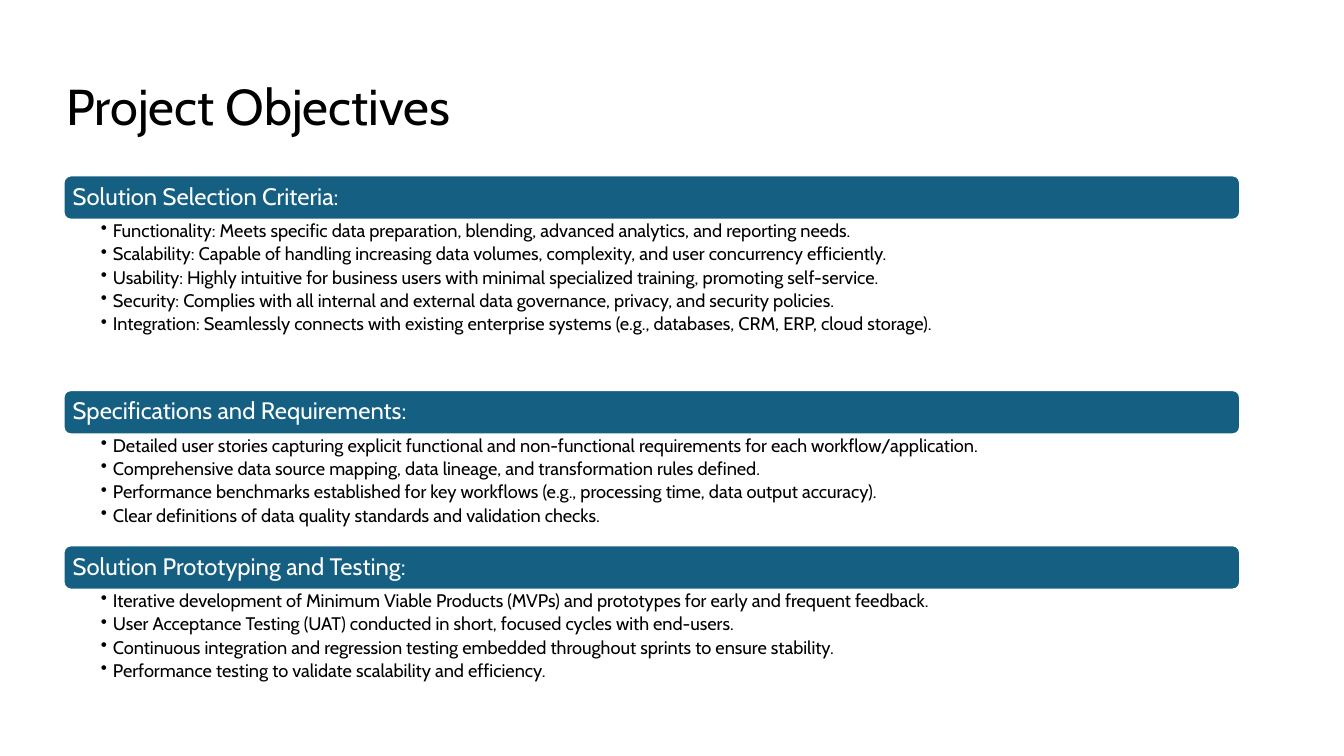
import dataclasses

import lxml.etree
import pptx
import pptx.dml.color
import pptx.enum.shapes
import pptx.enum.text
import pptx.oxml.ns
import pptx.util

Inches = pptx.util.Inches
Pt = pptx.util.Pt
RGB = pptx.dml.color.RGBColor
Align = pptx.enum.text.PP_ALIGN
Anchor = pptx.enum.text.MSO_ANCHOR


@dataclasses.dataclass(frozen=True)
class Theme:
    """Colours, typeface and type sizes of the slide."""
    face: str = "Cabin"
    ink: RGB = RGB(0x00, 0x00, 0x00)
    paper: RGB = RGB(0xFF, 0xFF, 0xFF)
    accent: RGB = RGB(0x15, 0x60, 0x82)
    title_size: float = 36
    heading_size: float = 17
    bullet_size: float = 13
    line_spacing: float = 0.9


THEME = Theme()
SLIDE_SIZE = (13.33, 7.5)
TITLE_BOX = (0.56, 0.71, 5.8, 0.69)
OBJECTIVES_BOX = (0.63, 1.74, 11.67, 5.2)
HEADING_HEIGHT = 0.44
BULLET_INDENT = 0.12

OBJECTIVES = [
    ("Solution Selection Criteria:", 1.69, [
        "Functionality: Meets specific data preparation, blending, advanced analytics, and reporting needs.",
        "Scalability: Capable of handling increasing data volumes, complexity, and user concurrency efficiently.",
        "Usability: Highly intuitive for business users with minimal specialized training, promoting self-service.",
        "Security: Complies with all internal and external data governance, privacy, and security policies.",
        "Integration: Seamlessly connects with existing enterprise systems (e.g., databases, CRM, ERP, cloud storage).",
    ]),
    ("Specifications and Requirements:", 1.1, [
        "Detailed user stories capturing explicit functional and non-functional requirements for each workflow/application.",
        "Comprehensive data source mapping, data lineage, and transformation rules defined.",
        "Performance benchmarks established for key workflows (e.g., processing time, data output accuracy).",
        "Clear definitions of data quality standards and validation checks.",
    ]),
    ("Solution Prototyping and Testing:", 1.1, [
        "Iterative development of Minimum Viable Products (MVPs) and prototypes for early and frequent feedback.",
        "User Acceptance Testing (UAT) conducted in short, focused cycles with end-users.",
        "Continuous integration and regression testing embedded throughout sprints to ensure stability.",
        "Performance testing to validate scalability and efficiency.",
    ]),
]


def format_paragraph(paragraph, size, color):
    """Apply the theme's typeface and line spacing to a left-aligned paragraph."""
    paragraph.alignment = Align.LEFT
    paragraph.line_spacing = THEME.line_spacing
    paragraph.font.name = THEME.face
    paragraph.font.size = Pt(size)
    paragraph.font.color.rgb = color


def set_frame(frame, anchor, left, top, right, bottom):
    """Set wrapping, anchor and insets of a text frame."""
    frame.word_wrap = True
    frame.auto_size = pptx.enum.text.MSO_AUTO_SIZE.NONE
    frame.vertical_anchor = anchor
    frame.margin_left, frame.margin_top = Inches(left), Inches(top)
    frame.margin_right, frame.margin_bottom = Inches(right), Inches(bottom)


def add_bullet(paragraph):
    """Give a paragraph a hanging bullet."""
    properties = paragraph._p.get_or_add_pPr()
    properties.set("marL", str(Inches(BULLET_INDENT)))
    properties.set("indent", str(-Inches(BULLET_INDENT)))
    bullet = lxml.etree.SubElement(properties, pptx.oxml.ns.qn("a:buChar"))
    bullet.set("char", "•")


def place_title(slide, box, wording):
    """Move the title placeholder into the box and format it."""
    title = slide.shapes.title
    title.left, title.top, title.width, title.height = map(Inches, box)
    title.text_frame.text = wording
    set_frame(title.text_frame, Anchor.BOTTOM, 0.1, 0.05, 0.1, 0.05)
    format_paragraph(title.text_frame.paragraphs[0], THEME.title_size, THEME.ink)


def place_heading(slide, box, wording):
    """Draw a rounded bar that carries a section heading."""
    bar = slide.shapes.add_shape(
        pptx.enum.shapes.MSO_SHAPE.ROUNDED_RECTANGLE, *map(Inches, box))
    bar.shadow.inherit = False
    bar.fill.solid()
    bar.fill.fore_color.rgb = THEME.accent
    bar.line.color.rgb = THEME.paper
    bar.line.width = Pt(1.5)
    bar.text_frame.text = wording
    set_frame(bar.text_frame, Anchor.MIDDLE, 0.07, 0.05, 0.07, 0.05)
    format_paragraph(bar.text_frame.paragraphs[0], THEME.heading_size, THEME.paper)


def place_bullets(slide, box, points):
    """Write the points of a section as a bulleted list."""
    frame = slide.shapes.add_textbox(*map(Inches, box)).text_frame
    frame.text = "\n".join(points)
    set_frame(frame, Anchor.TOP, 0.37, 0.02, 0.13, 0.02)
    for point in frame.paragraphs:
        add_bullet(point)
        point.space_after = Pt(0.2 * THEME.bullet_size)
        format_paragraph(point, THEME.bullet_size, THEME.ink)


def place_objectives(slide, box, objectives):
    """Stack the sections, each a heading bar above its list, down the box."""
    left, top, width, _ = box
    for heading, list_height, points in objectives:
        place_heading(slide, (left, top, width, HEADING_HEIGHT), heading)
        top += HEADING_HEIGHT
        place_bullets(slide, (left, top, width, list_height), points)
        top += list_height


def main():
    """Build the slide and save it."""
    deck = pptx.Presentation()
    deck.slide_width, deck.slide_height = map(Inches, SLIDE_SIZE)
    slide = deck.slides.add_slide(deck.slide_layouts.get_by_name("Title Only"))
    place_title(slide, TITLE_BOX, "Project Objectives")
    place_objectives(slide, OBJECTIVES_BOX, OBJECTIVES)
    deck.save("out.pptx")


if __name__ == "__main__":
    main()
